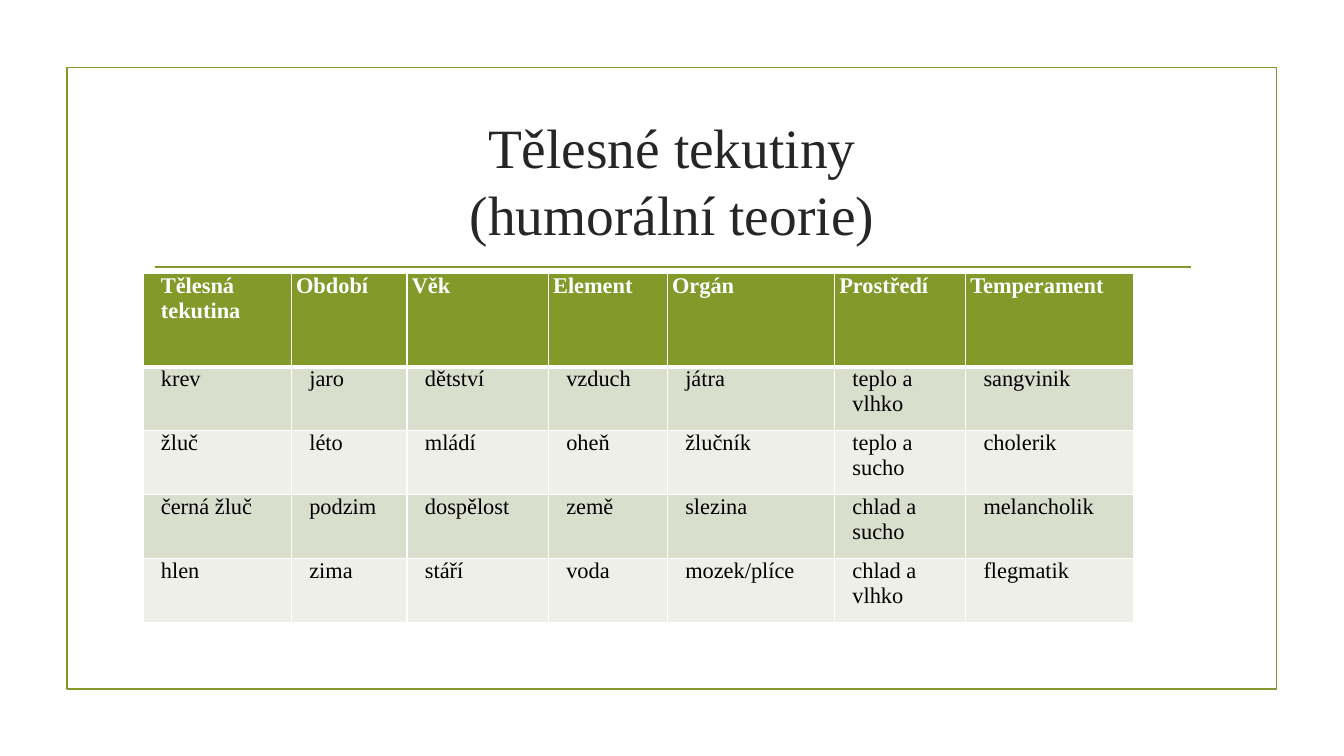
from lxml import etree
from pptx import Presentation
from pptx.dml.color import RGBColor
from pptx.enum import shapes, text
from pptx.oxml import ns
from pptx.util import Pt

GREEN = RGBColor(0x83, 0x99, 0x2A)
DARK = RGBColor(0x26, 0x26, 0x26)
BLACK = RGBColor(0, 0, 0)
WHITE = RGBColor(255, 255, 255)
BANDS = (RGBColor(0xD9, 0xDE, 0xCD), RGBColor(0xED, 0xEF, 0xE8))
FONT = "Times New Roman"

TITLE = "Tělesné tekutiny\v(humorální teorie)"
HUMOURS = (
    ("Tělesná tekutina", "Období", "Věk", "Element", "Orgán", "Prostředí", "Temperament"),
    ("krev", "jaro", "dětství", "vzduch", "játra", "teplo a vlhko", "sangvinik"),
    ("žluč", "léto", "mládí", "oheň", "žlučník", "teplo a sucho", "cholerik"),
    ("černá žluč", "podzim", "dospělost", "země", "slezina", "chlad a sucho", "melancholik"),
    ("hlen", "zima", "stáří", "voda", "mozek/plíce", "chlad a vlhko", "flegmatik"),
)
COLUMN_WIDTHS = (106, 82.6, 101, 85, 119.4, 93.6, 120.2)
ROW_HEIGHTS = (66.6,) + (45.7,) * 4
CELL_FORMAT = {"margin_left": Pt(3.4), "margin_right": Pt(3.4),
               "margin_top": 0, "margin_bottom": 0}


def set_attributes(target, values):
    for name, value in values.items():
        setattr(target, name, value)


def format_text(paragraph, size, color, bold=False):
    for run in paragraph.runs:
        set_attributes(run.font, {"name": FONT, "size": Pt(size), "bold": bold})
        run.font.color.rgb = color


def add_frame(slide, left, top, width, height):
    frame = slide.shapes.add_shape(shapes.MSO_SHAPE.RECTANGLE,
                                   Pt(left), Pt(top), Pt(width), Pt(height))
    frame.shadow.inherit = False
    frame.fill.background()
    frame.line.color.rgb = GREEN
    frame.line.width = Pt(1.25)
    rule_left, rule_top = Pt(left + 62.6), Pt(top + 142.6)
    rule = slide.shapes.add_connector(shapes.MSO_CONNECTOR.STRAIGHT, rule_left, rule_top,
                                      rule_left + Pt(740.5), rule_top)
    rule.line.color.rgb = GREEN
    rule.line.width = Pt(1.25)
    etree.SubElement(rule._element.spPr, ns.qn("a:effectLst"))


def place_title(slide, left, top, width, height):
    title = slide.shapes.title
    set_attributes(title, {"left": Pt(left), "top": Pt(top),
                           "width": Pt(width), "height": Pt(height)})
    frame = title.text_frame
    frame.text = TITLE
    set_attributes(frame, {"word_wrap": True, "auto_size": text.MSO_AUTO_SIZE.NONE,
                           "vertical_anchor": text.MSO_ANCHOR.MIDDLE})
    paragraph = frame.paragraphs[0]
    paragraph.alignment = text.PP_ALIGN.CENTER
    format_text(paragraph, 39.6, DARK)


def add_border(cell, side, width):
    border = etree.SubElement(cell._tc.get_or_add_tcPr(), ns.qn(f"a:ln{side}"), w=str(Pt(width)))
    fill = etree.SubElement(border, ns.qn("a:solidFill"))
    etree.SubElement(fill, ns.qn("a:srgbClr"), val=str(WHITE))


def fill_cell(cell, content, row, column):
    header = row == 0
    set_attributes(cell, CELL_FORMAT)
    thick_side = {0: "B", 1: "T"}.get(row)
    for side in "LRTB":
        add_border(cell, side, 3 if side == thick_side else 1)
    cell.fill.solid()
    cell.fill.fore_color.rgb = GREEN if header else BANDS[(row - 1) % 2]
    cell.text = content
    paragraph = cell.text_frame.paragraphs[0]
    if not header or column == 0:
        paragraph._p.get_or_add_pPr().set("marL", str(Pt(9.4)))
    format_text(paragraph, 16, WHITE if header else BLACK, header)


def add_humour_table(slide, left, top, width, height):
    table = slide.shapes.add_table(len(HUMOURS), len(COLUMN_WIDTHS),
                                   Pt(left), Pt(top), Pt(width), Pt(height)).table
    for column, column_width in zip(table.columns, COLUMN_WIDTHS):
        column.width = Pt(column_width)
    for row, row_height in zip(table.rows, ROW_HEIGHTS):
        row.height = Pt(row_height)
    for row, contents in enumerate(HUMOURS):
        for column, content in enumerate(contents):
            fill_cell(table.cell(row, column), content, row, column)


def main():
    presentation = Presentation()
    set_attributes(presentation, {"slide_width": Pt(960), "slide_height": Pt(540)})
    slide = presentation.slides.add_slide(presentation.slide_layouts[5])
    add_frame(slide, 47.8, 48.2, 864, 444)
    place_title(slide, 102, 77, 756, 103)
    add_humour_table(slide, 102.2, 195.4, sum(COLUMN_WIDTHS), sum(ROW_HEIGHTS))
    presentation.save("out.pptx")


if __name__ == "__main__":
    main()
